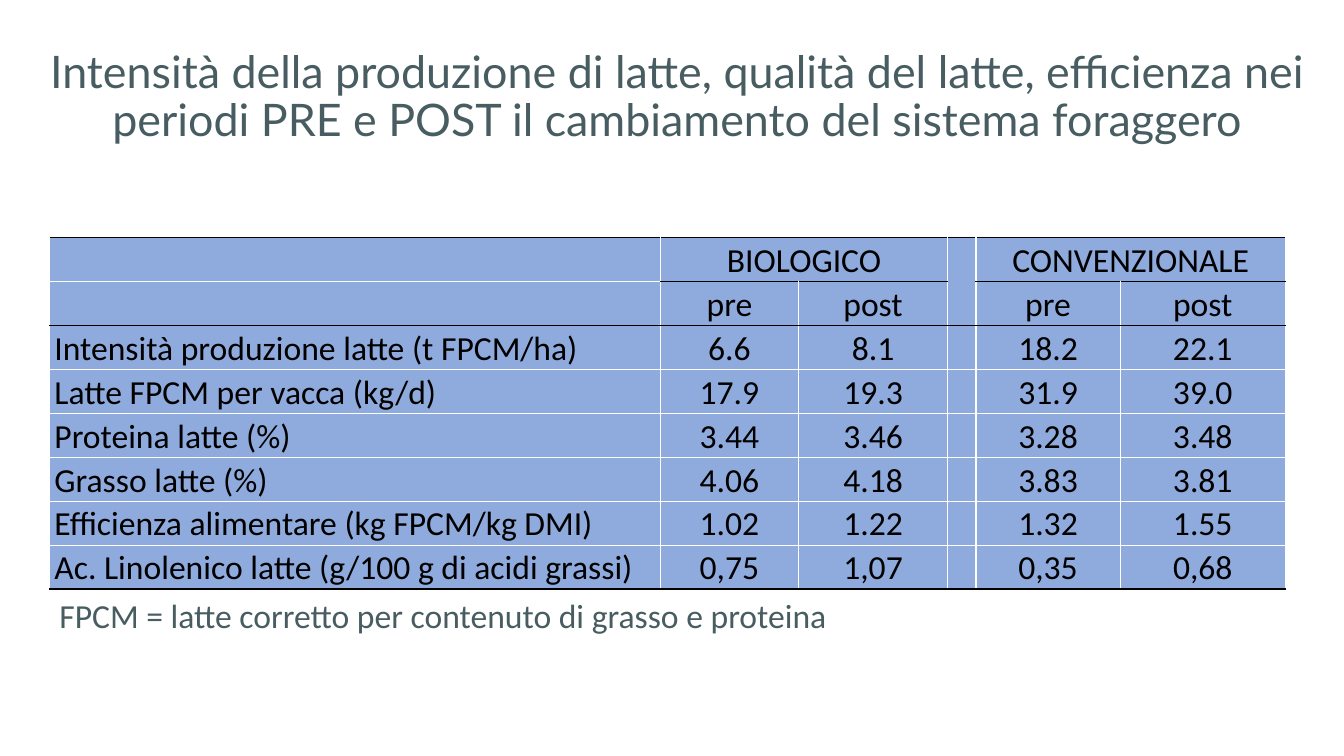
"""Build the slide on milk yield, quality and efficiency before and after the forage change."""
from lxml import etree
from pptx import Presentation
from pptx.dml.color import RGBColor
from pptx.enum import text as tx
from pptx.oxml import ns
from pptx.util import Inches, Pt

TITLE = ("Intensità della produzione di latte, qualità del latte, efficienza nei "
         "periodi PRE e POST il cambiamento del sistema foraggero")
FOOTNOTE = "FPCM = latte corretto per contenuto di grasso e proteina"
ROWS = [
    ("", "BIOLOGICO", "", "", "CONVENZIONALE", ""),
    ("", "pre", "post", "", "pre", "post"),
    ("Intensità produzione latte (t FPCM/ha)", "6.6", "8.1", "", "18.2", "22.1"),
    ("Latte FPCM per vacca (kg/d)", "17.9", "19.3", "", "31.9", "39.0"),
    ("Proteina latte (%)", "3.44", "3.46", "", "3.28", "3.48"),
    ("Grasso latte (%)", "4.06", "4.18", "", "3.83", "3.81"),
    ("Efficienza alimentare (kg FPCM/kg DMI)", "1.02", "1.22", "", "1.32", "1.55"),
    ("Ac. Linolenico latte (g/100 g di acidi grassi)", "0,75", "1,07", "", "0,35", "0,68"),
]
COLUMN_WIDTHS = [6.06, 1.37, 1.48, 0.28, 1.43, 1.64]
ROW_HEIGHT = 0.41
LABEL, GAP = 0, 3
GROUP_STARTS = (1, 4)

SLATE = RGBColor(0x48, 0x5D, 0x61)
BLUE = RGBColor(0x8F, 0xAA, 0xDC)
BLACK = RGBColor(0, 0, 0)
WHITE = RGBColor(255, 255, 255)


def write(frame, words, size=24, font="Calibri", color=BLACK,
          align=tx.PP_ALIGN.LEFT, spacing=None, after=None):
    """Put one formatted paragraph in a text frame."""
    paragraph = frame.paragraphs[0]
    paragraph.text = words
    paragraph.alignment = align
    paragraph.line_spacing = spacing
    paragraph.space_after = after
    paragraph.font.size = Pt(size)
    paragraph.font.name = font
    paragraph.font.color.rgb = color


def rule_color(edge, column):
    """Return the colour of the horizontal rule above row number edge."""
    if edge in (0, 2, len(ROWS)):
        return BLACK
    if edge == 1:
        return {LABEL: WHITE, GAP: None}.get(column, BLACK)
    return WHITE


def draw_borders(cell, row, column):
    """Add the four one-point borders of a cell."""
    borders = {"lnL": WHITE, "lnR": WHITE,
               "lnT": rule_color(row, column), "lnB": rule_color(row + 1, column)}
    properties = cell._tc.get_or_add_tcPr()
    for position, (side, color) in enumerate(borders.items()):
        line = etree.Element(ns.qn("a:" + side), w=str(Pt(1)))
        if color is None:
            etree.SubElement(line, ns.qn("a:noFill"))
        else:
            fill = etree.SubElement(line, ns.qn("a:solidFill"))
            etree.SubElement(fill, ns.qn("a:srgbClr"), val=str(color))
        properties.insert(position, line)


def add_results(slide):
    """Add the table of results."""
    table = slide.shapes.add_table(
        len(ROWS), len(COLUMN_WIDTHS), Inches(0.49), Inches(2.36),
        Inches(sum(COLUMN_WIDTHS)), Inches(ROW_HEIGHT * len(ROWS))).table
    table.first_row = table.horz_banding = False
    for column, width in zip(table.columns, COLUMN_WIDTHS):
        column.width = Inches(width)
    for row, values in enumerate(ROWS):
        table.rows[row].height = Inches(ROW_HEIGHT)
        for column, value in enumerate(values):
            cell = table.cell(row, column)
            cell.margin_left = cell.margin_right = Inches(0.05)
            cell.margin_top = cell.margin_bottom = 0
            if row == 1:
                cell.vertical_anchor = tx.MSO_ANCHOR.BOTTOM
            cell.fill.solid()
            cell.fill.fore_color.rgb = BLUE
            draw_borders(cell, row, column)
            align = tx.PP_ALIGN.JUSTIFY if column == LABEL else tx.PP_ALIGN.CENTER
            write(cell.text_frame, value, align=align, spacing=1.07, after=Pt(8))
    for start in GROUP_STARTS:
        table.cell(0, start).merge(table.cell(0, start + 1))


def main():
    """Assemble and save the slide."""
    deck = Presentation()
    deck.slide_width, deck.slide_height = Inches(13.33), Inches(7.5)
    slide = deck.slides.add_slide(deck.slide_layouts[5])

    title = slide.shapes.title
    title.left, title.top = Inches(0.28), Inches(0.48)
    title.width, title.height = Inches(12.88), Inches(1.02)
    title.text_frame.auto_size = tx.MSO_AUTO_SIZE.NONE
    title.text_frame.vertical_anchor = tx.MSO_ANCHOR.BOTTOM
    write(title.text_frame, TITLE, size=32, font="Lato", color=SLATE,
          align=tx.PP_ALIGN.CENTER, spacing=0.9)

    add_results(slide)

    footnote = slide.shapes.add_textbox(Inches(0.49), Inches(5.85), Inches(9.22), Inches(0.5))
    footnote.text_frame.word_wrap = True
    footnote.text_frame.auto_size = tx.MSO_AUTO_SIZE.SHAPE_TO_FIT_TEXT
    write(footnote.text_frame, FOOTNOTE, color=SLATE)

    deck.save("out.pptx")


if __name__ == "__main__":
    main()
